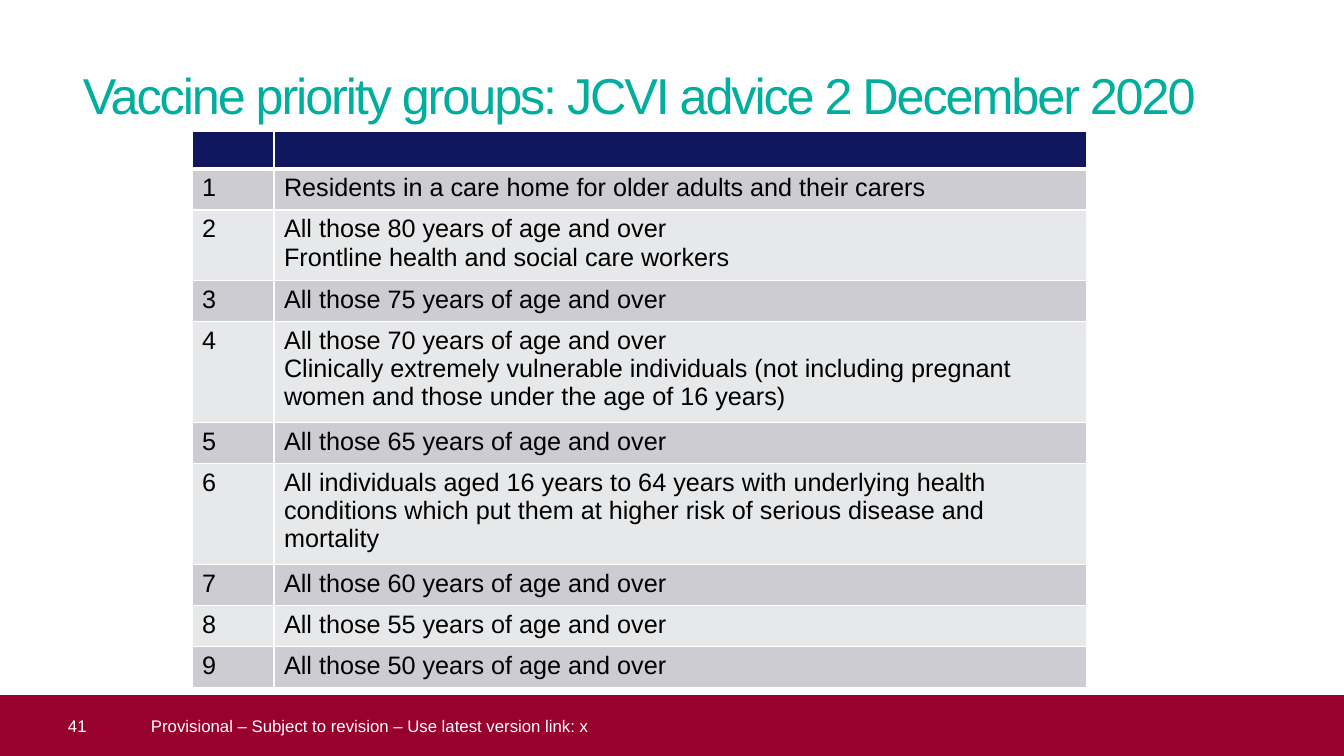
from pptx import Presentation
from pptx.dml.color import RGBColor
from pptx.enum.shapes import MSO_SHAPE
from pptx.enum.text import MSO_ANCHOR, PP_ALIGN
from pptx.util import Emu, Pt
from lxml import etree

RECT = MSO_SHAPE.RECTANGLE
MIDDLE = MSO_ANCHOR.MIDDLE
LEFT = PP_ALIGN.LEFT

TEAL = RGBColor(0x00, 0xAE, 0x9E)
MAROON = RGBColor(0x98, 0x00, 0x2E)
NAVY = RGBColor(0x11, 0x17, 0x5E)
DARK_BAND = RGBColor(0xCC, 0xCC, 0xD2)
LIGHT_BAND = RGBColor(0xE7, 0xE8, 0xEA)
WHITE = RGBColor(0xFF, 0xFF, 0xFF)
BLACK = RGBColor(0x00, 0x00, 0x00)

NS = "http://schemas.openxmlformats.org/drawingml/2006/main"

GROUPS = [
    ["Residents in a care home for older adults and their carers"],
    ["All those 80 years of age and over", "Frontline health and social care workers"],
    ["All those 75 years of age and over"],
    ["All those 70 years of age and over",
     "Clinically extremely vulnerable individuals (not including pregnant "
     "women and those under the age of 16 years)"],
    ["All those 65 years of age and over"],
    ["All individuals aged 16 years to 64 years with underlying health conditions "
     "which put them at higher risk of serious disease and mortality"],
    ["All those 60 years of age and over"],
    ["All those 55 years of age and over"],
    ["All those 50 years of age and over"],
]
ROW_HEIGHTS = [38, 41, 67, 41, 95, 41, 95, 41, 41, 41]


def px(n):
    return Emu(round(n * 914400 / 100.8))


def write(tf, lines, size, color, left=None):
    """Fill a text frame, one paragraph a line; left also clears the insets."""
    tf.word_wrap = True
    if left is not None:
        tf.margin_left = px(left)
        tf.margin_top = tf.margin_right = tf.margin_bottom = 0
    for i, line in enumerate(lines):
        p = tf.paragraphs[0] if i == 0 else tf.add_paragraph()
        p.alignment = LEFT
        r = p.add_run()
        r.text = line
        r.font.name = "Arial"
        r.font.size = Pt(size)
        r.font.color.rgb = color


prs = Presentation()
prs.slide_width, prs.slide_height = px(1344), px(756)
s = prs.slides.add_slide(prs.slide_layouts[6])

# Title
tf = s.shapes.add_textbox(px(83), px(64), px(1180), px(72)).text_frame
write(tf, ["Vaccine priority groups: JCVI advice 2 December 2020"], 36, TEAL, left=0)
tf.paragraphs[0].runs[0].font._element.set("spc", "-150")

# Footer band with the slide number
sp = s.shapes.add_shape(RECT, 0, px(695), px(1344), px(61))
sp.shadow.inherit = False
sp.fill.solid()
sp.fill.fore_color.rgb = MAROON
sp.line.fill.background()
sp.text_frame.vertical_anchor = MIDDLE
write(sp.text_frame, ["41"], 12, WHITE, left=68)

# Footer note
tf = s.shapes.add_textbox(px(132), px(695), px(1185), px(61)).text_frame
tf.vertical_anchor = MIDDLE
write(tf, ["Provisional – Subject to revision – Use latest version link: x"], 12, WHITE, left=19)

# Priority table
table = s.shapes.add_table(len(ROW_HEIGHTS), 2, px(192), px(131), px(895),
                           px(sum(ROW_HEIGHTS))).table
for column, width in zip(table.columns, (82, 813)):
    column.width = px(width)
for row, height in zip(table.rows, ROW_HEIGHTS):
    row.height = px(height)
for i, lines in enumerate(GROUPS, 1):
    write(table.cell(i, 0).text_frame, [str(i)], 18, BLACK)
    write(table.cell(i, 1).text_frame, lines, 18, BLACK)

# Cell borders and fills
for i, row in enumerate(table.rows):
    for cell in row.cells:
        if i == 0:
            cell.margin_top = cell.margin_bottom = 0
        tcPr = cell._tc.get_or_add_tcPr()
        for side in "LRTB":
            thick = (i == 0 and side == "B") or (i == 1 and side == "T")
            ln = etree.SubElement(tcPr, f"{{{NS}}}ln{side}", w=str(Pt(3 if thick else 1)))
            fill = etree.SubElement(ln, f"{{{NS}}}solidFill")
            etree.SubElement(fill, f"{{{NS}}}srgbClr", val=str(WHITE))
        cell.fill.solid()
        cell.fill.fore_color.rgb = NAVY if i == 0 else DARK_BAND if i % 2 else LIGHT_BAND

prs.save("out.pptx")
